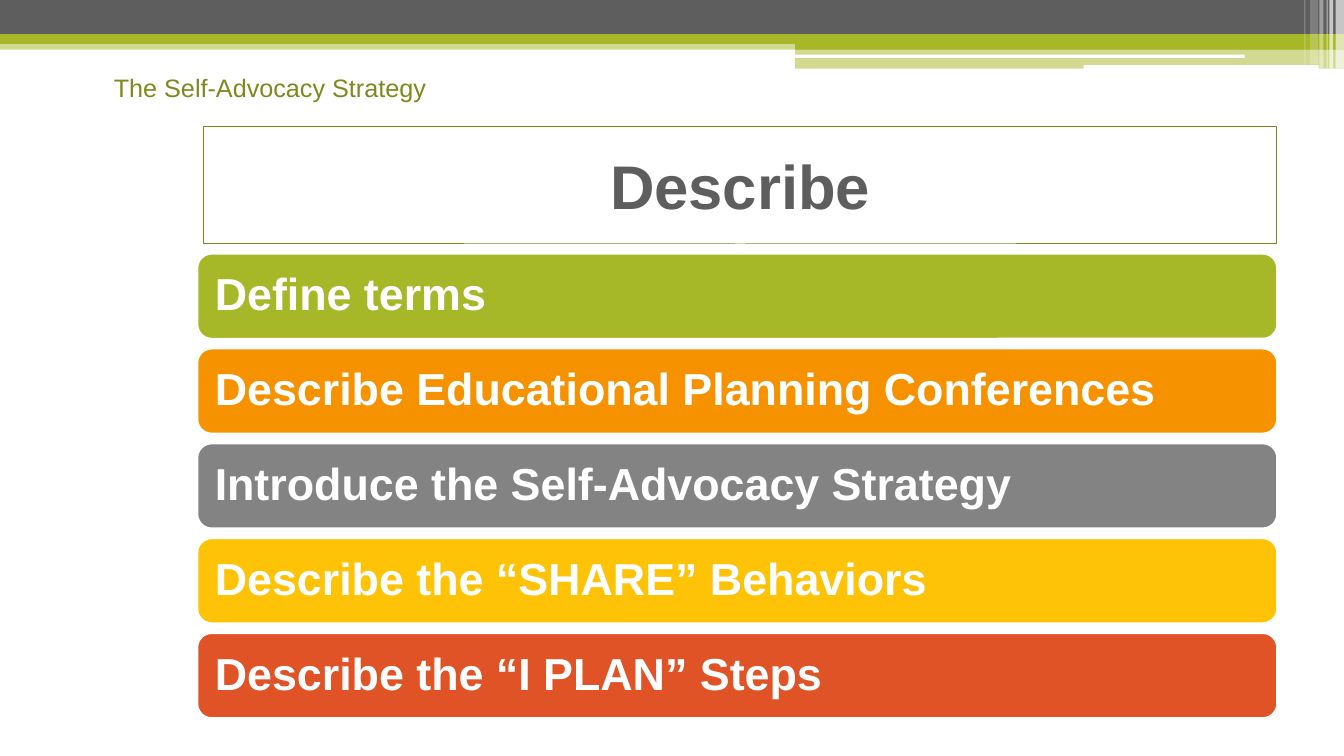
from dataclasses import dataclass

from lxml import etree
from pptx import Presentation
from pptx.dml.color import RGBColor
from pptx.enum.shapes import MSO_SHAPE
from pptx.enum.text import MSO_ANCHOR, PP_ALIGN
from pptx.oxml.ns import qn
from pptx.util import Cm, Pt

RECT, ROUND = MSO_SHAPE.RECTANGLE, MSO_SHAPE.ROUNDED_RECTANGLE
LEFT, CENTER = PP_ALIGN.LEFT, PP_ALIGN.CENTER
TOP, MIDDLE = MSO_ANCHOR.TOP, MSO_ANCHOR.MIDDLE


@dataclass(frozen=True)
class Theme:
    font: str = "Arial"
    white: str = "FFFFFF"
    gray: str = "5E5E5E"
    green: str = "A6B727"
    olive: str = "7D891D"
    orange: str = "F69200"
    silver: str = "838383"
    yellow: str = "FEC306"
    red: str = "DF5327"
    label_size: int = 18
    step_size: int = 32
    title_size: int = 44


@dataclass(frozen=True)
class Band:
    left: float
    top: float
    width: float
    height: float
    color: str
    alpha: int = 100
    shape: MSO_SHAPE = RECT


@dataclass(frozen=True)
class Step:
    text: str
    color: str


THEME = Theme()
WIDTH, HEIGHT = 33.87, 19.05
HALF_LEFT = 20.04
HALF_WIDTH = WIDTH - HALF_LEFT
STEP_LEFT, STEP_TOP, STEP_WIDTH, STEP_HEIGHT = 4.98, 6.4, 27.2, 2.13
STEP_PITCH = 2.39

BANDS = [
    Band(0, 1.02, WIDTH, 0.23, THEME.green, 50),
    Band(0, 0, WIDTH, 0.86, THEME.gray),
    Band(0, 0.86, WIDTH, 0.25, THEME.green),
    Band(HALF_LEFT, 0.99, HALF_WIDTH, 0.26, THEME.green),
    Band(HALF_LEFT, 1.23, HALF_WIDTH, 0.5, THEME.green, 50),
    Band(20.02, 1.38, 11.35, 0.08, THEME.white, shape=ROUND),
    Band(27.31, 1.64, 5.92, 0.1, THEME.white, shape=ROUND),
    Band(33.66, 0, 0.21, 1.73, THEME.white, 65),
    Band(33.5, 0, 0.1, 1.73, THEME.white, 65),
    Band(33.43, 0, 0.03, 1.73, THEME.white, 60),
    Band(33.25, 0, 0.1, 1.73, THEME.white, 40),
    Band(33.02, 0, 0.2, 1.63, THEME.white, 20),
    Band(32.87, 0, 0.03, 1.63, THEME.white, 30),
]

STEPS = [
    Step("Define terms", THEME.green),
    Step("Describe Educational Planning Conferences", THEME.orange),
    Step("Introduce the Self-Advocacy Strategy", THEME.silver),
    Step("Describe the “SHARE” Behaviors", THEME.yellow),
    Step("Describe the “I PLAN” Steps", THEME.red),
]


def write(sp, text: str, *, size: int, color: str, bold: bool = False,
          align: PP_ALIGN = LEFT, anchor: MSO_ANCHOR = TOP, wrap: bool = True,
          inset: float = 0.25, spacing: float = 1.0) -> None:
    """Put one formatted paragraph into a shape."""
    tf = sp.text_frame
    tf.word_wrap = wrap
    tf.vertical_anchor = anchor
    tf.margin_left = tf.margin_right = Cm(inset)
    tf.margin_top = tf.margin_bottom = Cm(0.13)
    p = tf.paragraphs[0]
    p.alignment = align
    p.line_spacing = spacing
    r = p.add_run()
    r.text = text
    r.font.name = THEME.font
    r.font.size = Pt(size)
    r.font.bold = bold
    r.font.color.rgb = RGBColor.from_string(color)


def add_band(s, band: Band):
    """Draw a filled shape without outline."""
    sp = s.shapes.add_shape(band.shape, Cm(band.left), Cm(band.top),
                            Cm(band.width), Cm(band.height))
    sp.shadow.inherit = False
    sp.fill.solid()
    sp.fill.fore_color.rgb = RGBColor.from_string(band.color)
    sp.line.fill.background()
    if band.alpha < 100:
        clr = sp._element.spPr.find(qn("a:solidFill")).find(qn("a:srgbClr"))
        etree.SubElement(clr, qn("a:alpha")).set("val", str(band.alpha * 1000))
    return sp


def set_line(sp, color: str, width: float) -> None:
    """Give a shape a solid outline."""
    sp.line.color.rgb = RGBColor.from_string(color)
    sp.line.width = Pt(width)


def add_step(s, step: Step, index: int) -> None:
    """Draw one step bar of the evenly spaced list."""
    sp = add_band(s, Band(STEP_LEFT, STEP_TOP + index * STEP_PITCH, STEP_WIDTH,
                          STEP_HEIGHT, step.color, shape=ROUND))
    set_line(sp, THEME.white, 1)
    write(sp, step.text, size=THEME.step_size, color=THEME.white, bold=True,
          anchor=MIDDLE, inset=0.33, spacing=0.9)


def add_headings(s) -> None:
    """Draw the strategy label and the framed title."""
    label = s.shapes.add_textbox(Cm(2.62), Cm(1.7), Cm(8.46), Cm(1.02))
    write(label, "The Self-Advocacy Strategy", size=THEME.label_size,
          color=THEME.olive, wrap=False)
    title = add_band(s, Band(5.13, 3.18, 27.05, 2.97, THEME.white))
    title.fill.background()
    set_line(title, THEME.olive, 0.75)
    write(title, "Describe", size=THEME.title_size, color=THEME.gray, bold=True,
          align=CENTER, anchor=MIDDLE)


def main() -> None:
    """Build and save the slide."""
    prs = Presentation()
    prs.slide_width, prs.slide_height = Cm(WIDTH), Cm(HEIGHT)
    s = prs.slides.add_slide(prs.slide_layouts[6])
    for band in BANDS:
        add_band(s, band)
    add_headings(s)
    for index, step in enumerate(STEPS):
        add_step(s, step, index)
    prs.save("out.pptx")


if __name__ == "__main__":
    main()
